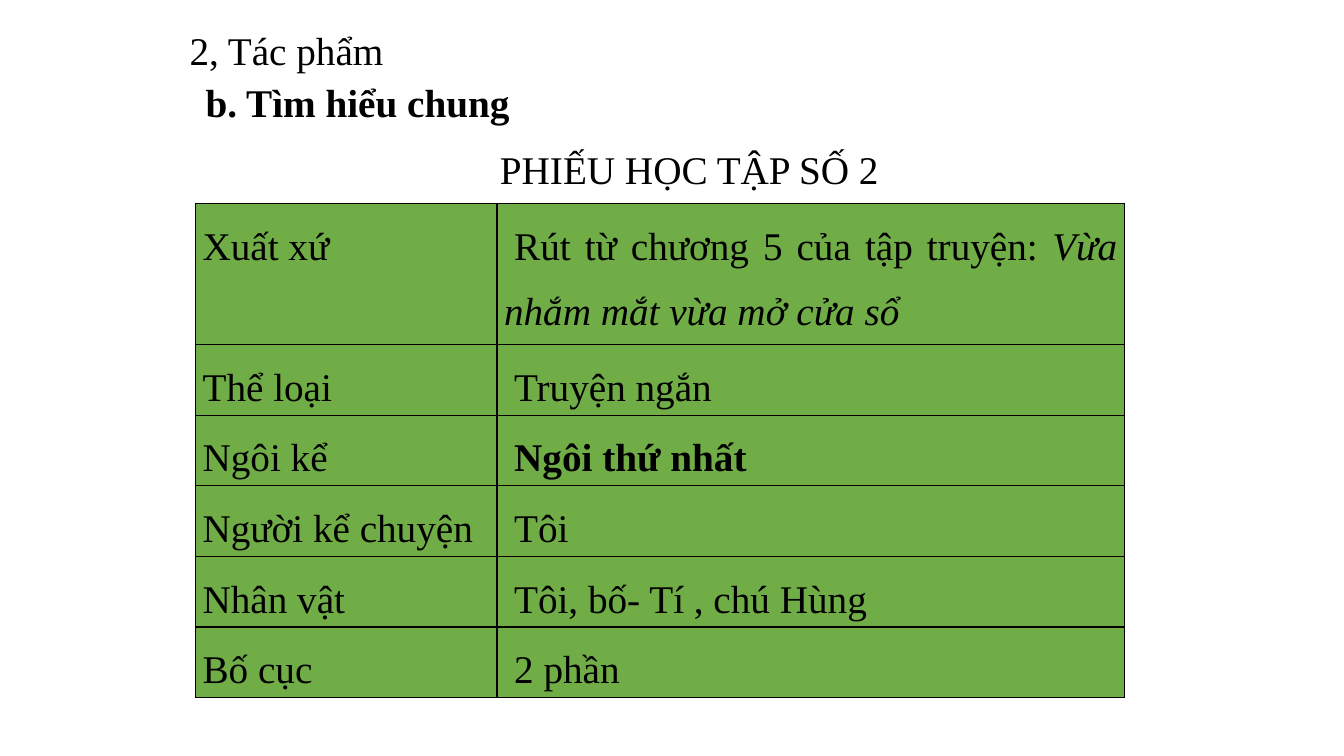
from typing import NamedTuple

from lxml import etree
from pptx import Presentation
from pptx.dml.color import RGBColor
from pptx.enum.text import MSO_ANCHOR, MSO_AUTO_SIZE, PP_ALIGN
from pptx.oxml.ns import qn
from pptx.util import Emu, Inches, Pt

LEFT, JUSTIFY = PP_ALIGN.LEFT, PP_ALIGN.JUSTIFY
TOP = MSO_ANCHOR.TOP
NO_AUTOFIT = MSO_AUTO_SIZE.NONE

FONT = "Times New Roman"
SIZE = 28
BLACK, GREEN = "000000", "70AD47"
TABLE_LEFT, TABLE_TOP = 1.94, 2.02
COLUMNS = (2.99, 6.22)
ROW = 0.7  # height of one text line in the table


class Heading(NamedTuple):
    text: str
    left: float
    top: float
    width: float
    height: float
    bold: bool = False
    line_spacing: float = 1.0


class Fact(NamedTuple):
    label: str
    value: str
    italic_tail: str = ""
    bold: bool = False
    lines: int = 1


TITLE = Heading("2, Tác phẩm", 1.78, 0.21, 4.57, 0.57)
HEADINGS = [
    Heading("b. Tìm hiểu chung", 1.94, 0.78, 3.25, 0.53, bold=True, line_spacing=0.9),
    Heading("PHIẾU HỌC TẬP SỐ 2", 4.86, 1.39, 4.41, 0.57),
]
FACTS = [
    Fact("Xuất xứ", "Rút từ chương 5 của tập truyện: ",
         italic_tail="Vừa nhắm mắt vừa mở cửa sổ", lines=2),
    Fact("Thể loại", "Truyện ngắn"),
    Fact("Ngôi kể", "Ngôi thứ nhất", bold=True),
    Fact("Người kể chuyện", "Tôi"),
    Fact("Nhân vật", "Tôi, bố- Tí , chú Hùng"),
    Fact("Bố cục", "2 phần"),
]


def color(hex_code: str) -> RGBColor:
    return RGBColor.from_string(hex_code)


def add_text(p, text: str, *, bold: bool = False, italic: bool = False) -> None:
    r = p.add_run()
    r.text = text
    r.font.name, r.font.size = FONT, Pt(SIZE)
    r.font.bold, r.font.italic = bold, italic
    r.font.color.rgb = color(BLACK)


def fill_heading(sp, heading: Heading) -> None:
    sp.left, sp.top = Inches(heading.left), Inches(heading.top)
    sp.width, sp.height = Inches(heading.width), Inches(heading.height)
    tf = sp.text_frame
    tf.word_wrap = True
    tf.auto_size = NO_AUTOFIT
    tf.vertical_anchor = TOP
    p = tf.paragraphs[0]
    p.alignment = LEFT
    p.line_spacing = heading.line_spacing
    add_text(p, heading.text, bold=heading.bold)


def add_borders(cell) -> None:
    tc_pr = cell._tc.get_or_add_tcPr()
    for side in ("a:lnL", "a:lnR", "a:lnT", "a:lnB"):
        ln = etree.SubElement(tc_pr, qn(side), w=str(Pt(1)))
        fill = etree.SubElement(ln, qn("a:solidFill"))
        etree.SubElement(fill, qn("a:srgbClr"), val=BLACK)


def format_cell(cell, *, indent: float = 0):
    """Style a table cell and return its paragraph."""
    cell.margin_left = cell.margin_right = Inches(0.07)
    cell.margin_top = cell.margin_bottom = Emu(0)
    add_borders(cell)
    cell.fill.solid()
    cell.fill.fore_color.rgb = color(GREEN)
    p = cell.text_frame.paragraphs[0]
    p.alignment = JUSTIFY
    p.line_spacing = 1.5
    p.space_after = Pt(10)
    p._p.get_or_add_pPr().set("indent", str(Inches(indent)))
    return p


def add_fact_table(s, facts: list[Fact]) -> None:
    height = ROW * sum(fact.lines for fact in facts)
    table = s.shapes.add_table(
        len(facts), len(COLUMNS), Inches(TABLE_LEFT), Inches(TABLE_TOP),
        Inches(sum(COLUMNS)), Inches(height)).table
    table.first_row = table.horz_banding = False
    for column, width in zip(table.columns, COLUMNS):
        column.width = Inches(width)
    for row, fact in zip(table.rows, facts):
        row.height = Inches(ROW * fact.lines)
        label, value = row.cells
        add_text(format_cell(label), fact.label)
        p = format_cell(value, indent=0.1)
        add_text(p, fact.value, bold=fact.bold)
        if fact.italic_tail:
            add_text(p, fact.italic_tail, italic=True)


def main() -> None:
    prs = Presentation()
    prs.slide_width, prs.slide_height = Inches(13.33), Inches(7.5)
    s = prs.slides.add_slide(prs.slide_layouts[5])

    # Headings
    fill_heading(s.shapes.title, TITLE)
    for heading in HEADINGS:
        fill_heading(s.shapes.add_textbox(0, 0, 0, 0), heading)

    # Worksheet table
    add_fact_table(s, FACTS)
    prs.save("out.pptx")


if __name__ == "__main__":
    main()
